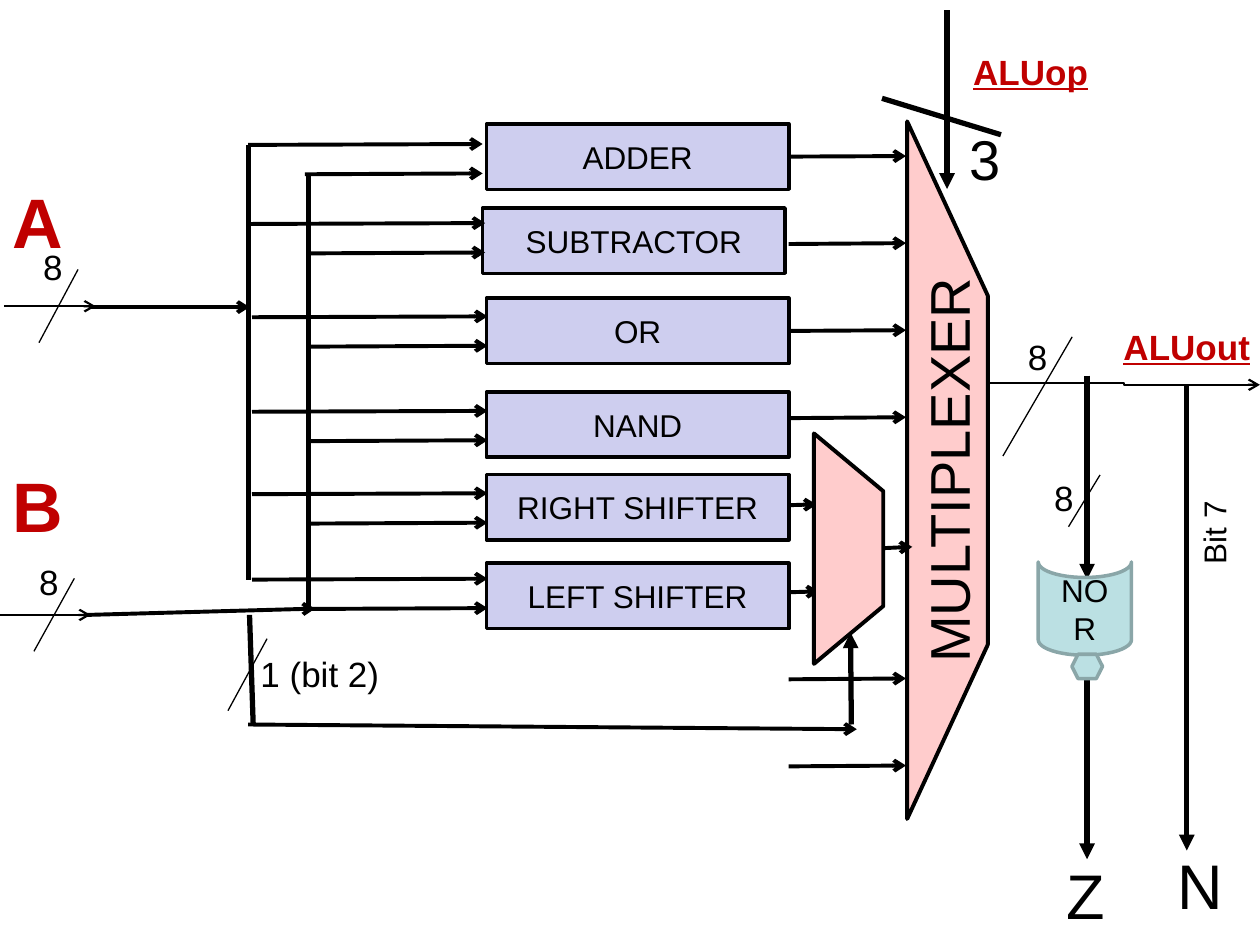
from dataclasses import dataclass

from lxml import etree
from pptx import Presentation
from pptx.dml.color import RGBColor
from pptx.enum.shapes import MSO_CONNECTOR, MSO_SHAPE
from pptx.enum.text import MSO_ANCHOR, MSO_AUTO_SIZE, PP_ALIGN
from pptx.oxml.ns import qn
from pptx.util import Pt

STRAIGHT, ELBOW = MSO_CONNECTOR.STRAIGHT, MSO_CONNECTOR.ELBOW
RECTANGLE = MSO_SHAPE.RECTANGLE
STORAGE = MSO_SHAPE.FLOWCHART_STORED_DATA
PREPARATION = MSO_SHAPE.FLOWCHART_PREPARATION
LEFT, CENTER = PP_ALIGN.LEFT, PP_ALIGN.CENTER
MIDDLE = MSO_ANCHOR.MIDDLE
RIGHT_SIDE = 3


@dataclass(frozen=True)
class Theme:
    font: str = "Arial"
    black: RGBColor = RGBColor(0x00, 0x00, 0x00)
    red: RGBColor = RGBColor(0xC0, 0x00, 0x00)
    unit_fill: RGBColor = RGBColor(0xCE, 0xCE, 0xEF)
    mux_fill: RGBColor = RGBColor(0xFF, 0xCC, 0xCC)
    gate_fill: RGBColor = RGBColor(0xBB, 0xE0, 0xE3)
    gate_line: RGBColor = RGBColor(0x8A, 0xA6, 0xA8)
    small: int = 18
    label: int = 20
    large: int = 32
    flag: int = 36
    operand: int = 40
    hairline: float = 0.75
    port: float = 1.25
    outline: float = 2
    wire: float = 2.25
    bus: float = 3


THEME = Theme()

# name, left, top, x where input A starts, x where inputs end, y of input A
UNITS = [
    ("ADDER", 278, 70.8, 141.8, 275.8, 82.8),
    ("SUBTRACTOR", 275.8, 118.8, 142.6, 277.2, 128),
    ("OR", 278, 170.4, 144, 278.6, 181.3),
    ("NAND", 278, 223.9, 144, 278.6, 235.3),
    ("RIGHT SHIFTER", 278, 271.2, 144, 278.6, 282.4),
    ("LEFT SHIFTER", 278, 321.8, 144, 278.6, 331.2),
]
UNIT_WIDTH, UNIT_HEIGHT = 172.8, 37.4
INPUT_B_OFFSET = (32.4, 16.8)
OUTPUT_ENDS = [517.7, 517.7, 517.7, 517.7, 466.6, 468, 517.7, 517.7]
OUTPUT_X, OUTPUT_TOP, OUTPUT_STEP = 450.7, 89.7, 49.75
JOINED_OUTPUTS = ("ADDER", "OR")


def add_line(slide, start, end, width, head=None, kind=STRAIGHT):
    points = [Pt(value) for value in (*start, *end)]
    connector = slide.shapes.add_connector(kind, *points)
    connector.line.color.rgb = THEME.black
    connector.line.width = Pt(width)
    if head:
        line = connector.line._get_or_add_ln()
        etree.SubElement(line, qn("a:tailEnd"), type=head)
    etree.SubElement(connector._element.spPr, qn("a:effectLst"))
    return connector


def write(shape, text, size, color=THEME.black, align=CENTER, strong=False):
    """Put one run in the shape; strong means bold, as for signal names."""
    paragraph = shape.text_frame.paragraphs[0]
    paragraph.alignment = align
    run = paragraph.add_run()
    run.text = text
    run.font.name = THEME.font
    run.font.size = Pt(size)
    run.font.bold = strong
    run.font.color.rgb = color
    return run


def add_label(slide, text, box, size, wrap=False, rotation=0, **style):
    shape = slide.shapes.add_textbox(*[Pt(value) for value in box])
    shape.rotation = rotation
    shape.text_frame.word_wrap = wrap
    shape.text_frame.auto_size = MSO_AUTO_SIZE.SHAPE_TO_FIT_TEXT
    return write(shape, text, size, **style)


def style_shape(shape, fill, line=THEME.black, width=THEME.outline):
    shape.shadow.inherit = False
    shape.fill.solid()
    shape.fill.fore_color.rgb = fill
    shape.line.color.rgb = line
    shape.line.width = Pt(width)
    shape.text_frame.vertical_anchor = MIDDLE


def add_box(slide, kind, box, fill, line=THEME.black):
    shape = slide.shapes.add_shape(kind, *[Pt(value) for value in box])
    style_shape(shape, fill, line)
    return shape


def add_multiplexer(slide, left, right, top, bottom, cut):
    """Draw a trapezoid whose right side is shorter by cut at each end."""
    corners = [(right, top + cut), (right, bottom - cut), (left, bottom)]
    builder = slide.shapes.build_freeform(Pt(left), Pt(top))
    builder.add_line_segments([(Pt(x), Pt(y)) for x, y in corners], close=True)
    shape = builder.convert_to_shape()
    style_shape(shape, THEME.mux_fill, width=THEME.wire)
    return shape


def add_bus_width(slide, text, slash_start, slash_end, box):
    add_line(slide, slash_start, slash_end, THEME.hairline)
    add_label(slide, text, box, THEME.label, wrap=True)


def add_units(slide):
    units = {}
    for name, left, top, start, end, y in UNITS:
        box = (left, top, UNIT_WIDTH, UNIT_HEIGHT)
        units[name] = add_box(slide, RECTANGLE, box, THEME.unit_fill)
        write(units[name], name, THEME.small)
        for dx, dy in ((0, 0), INPUT_B_OFFSET):
            add_line(slide, (start + dx, y + dy), (end, y + dy - 0.5), THEME.wire, "arrow")
    return units


def add_outputs(slide, units):
    names = list(units)
    for index, end in enumerate(OUTPUT_ENDS):
        y = OUTPUT_TOP + index * OUTPUT_STEP
        wire = add_line(slide, (OUTPUT_X, y), (end, y - 0.5), THEME.wire, "arrow")
        if index < len(names) and names[index] in JOINED_OUTPUTS:
            wire.begin_connect(units[names[index]], RIGHT_SIDE)


def add_operands(slide):
    for name, top in (("A", 98.6), ("B", 260.6)):
        add_label(slide, name, (0, top, 43.9, 55.4), THEME.operand,
                  color=THEME.red, align=LEFT, strong=True)
    add_line(slide, (2.2, 175), (54.7, 175), THEME.port, "arrow", ELBOW)
    add_line(slide, (0, 351.4), (51.8, 351.4), THEME.port, "arrow", ELBOW)
    add_bus_width(slide, "8", (44.6, 154), (22.3, 195.8), (-22.3, 136.8, 105, 31.7))
    add_bus_width(slide, "8", (42.5, 330.5), (19.4, 372.2), (-24.5, 316.8, 105, 31.7))
    add_line(slide, (141.8, 82.8), (141.8, 331.2), THEME.bus)
    add_line(slide, (176.4, 99.4), (176.4, 347.8), THEME.bus)
    add_line(slide, (51.1, 175.5), (142.6, 175.5), THEME.wire, "arrow")
    add_line(slide, (49.7, 351.4), (180, 347.8), THEME.wire, "arrow")


def add_shift_select(slide):
    add_multiplexer(slide, 465.1, 504.7, 247.7, 379.4, 33)
    add_line(slide, (505.4, 313.2), (521.3, 312.5), THEME.wire, "arrow")
    add_line(slide, (141.8, 414), (489.6, 416.7), THEME.wire, "arrow")
    add_line(slide, (486.5, 414), (486, 361.4), THEME.bus, "triangle")
    add_line(slide, (142.6, 351.4), (144.7, 414), THEME.bus)
    add_bus_width(slide, "1 (bit 2)", (152.6, 365), (130.3, 406.1), (130.3, 369.4, 105, 31.7))


def add_operation_select(slide):
    add_line(slide, (541.2, 5.8), (541.2, 108), THEME.bus, "triangle")
    add_line(slide, (504, 56.2), (572, 77), THEME.bus)
    add_label(slide, "3", (546.5, 67.7, 32.4, 46.1), THEME.large)
    add_label(slide, "ALUop", (518.4, 25.2, 141.1, 51.8), THEME.label,
              color=THEME.red, strong=True).font.underline = True


def add_result(slide):
    add_line(slide, (564.5, 218.9), (720, 219.9), THEME.port, "arrow", ELBOW)
    add_bus_width(slide, "8", (612.7, 192.5), (573.1, 260.6), (501.1, 188, 183.6, 31.7))
    add_label(slide, "ALUout", (620.6, 182.2, 115.2, 31.7), THEME.label, wrap=True,
              color=THEME.red, strong=True).font.underline = True


def add_flags(slide):
    add_line(slide, (678.2, 219.9), (678.2, 486), THEME.bus, "triangle")
    add_label(slide, "N", (666, 480.2, 41, 51), THEME.flag, align=LEFT)
    add_label(slide, "Bit 7", (668.2, 289.4, 51, 29), THEME.small, rotation=270, align=LEFT)
    add_line(slide, (621.2, 214.6), (621.2, 331.2), THEME.bus, "triangle")
    gate = add_box(slide, STORAGE, (593.3, 321.1, 53.3, 53.3), THEME.gate_fill, THEME.gate_line)
    gate.rotation = 270
    gate.text_frame.word_wrap = True
    gate.text_frame._txBody.bodyPr.set("vert", "vert")
    write(gate, "NOR", THEME.small)
    add_line(slide, (621.2, 373.7), (621.2, 491), THEME.bus, "triangle")
    add_label(slide, "Z", (602.6, 486, 36.7, 51), THEME.flag, align=LEFT)
    add_box(slide, PREPARATION, (612.5, 373.9, 17.5, 13.9), THEME.gate_fill, THEME.gate_line)
    add_bus_width(slide, "8", (628.6, 271.4), (610.6, 301), (516.2, 268.6, 183.6, 31.7))


def main():
    presentation = Presentation()
    presentation.slide_width, presentation.slide_height = Pt(720), Pt(540)
    slide = presentation.slides.add_slide(presentation.slide_layouts[6])
    multiplexer = add_multiplexer(slide, 518.4, 564.5, 69.4, 468, 99.6)
    multiplexer.text_frame.word_wrap = False
    multiplexer.text_frame._txBody.bodyPr.set("vert", "vert270")
    write(multiplexer, "MULTIPLEXER", THEME.large)
    add_operation_select(slide)
    add_outputs(slide, add_units(slide))
    add_operands(slide)
    add_result(slide)
    add_flags(slide)
    add_shift_select(slide)
    presentation.save("out.pptx")


if __name__ == "__main__":
    main()
